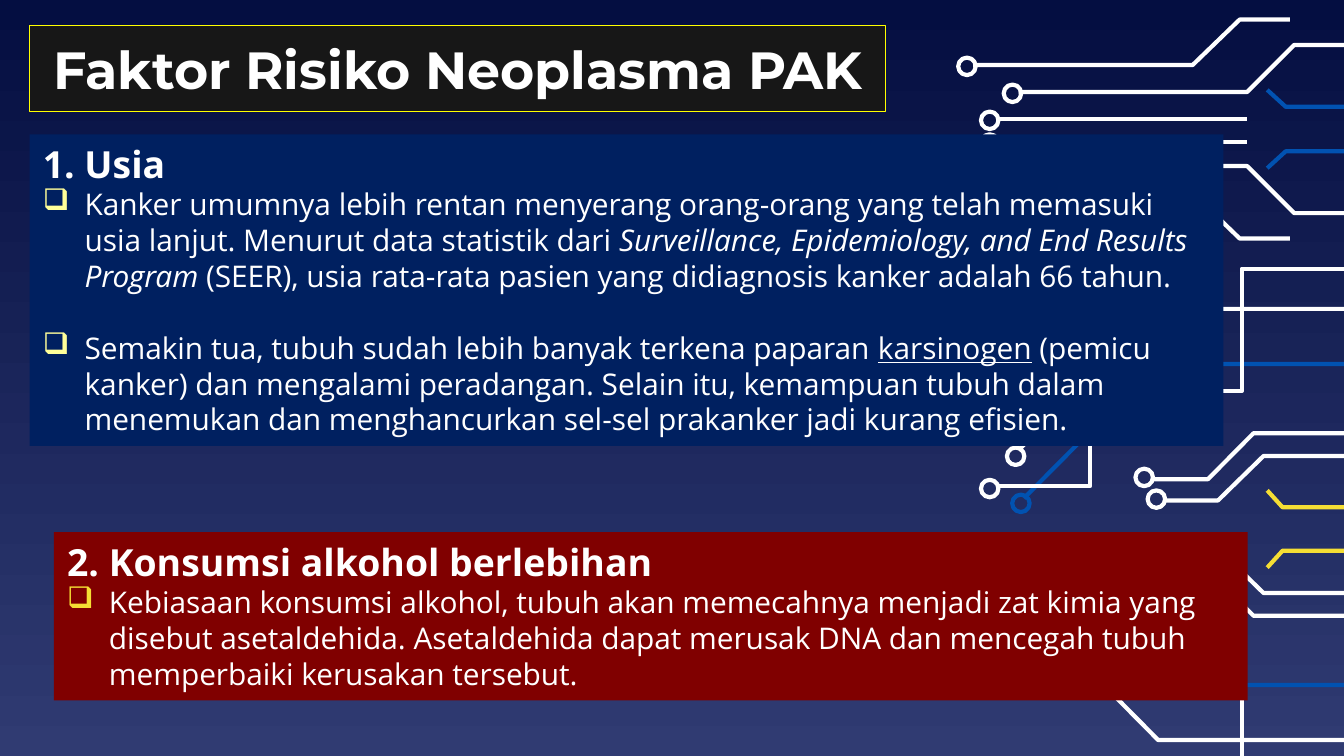
from dataclasses import dataclass
from typing import Optional

from lxml import etree
from pptx import Presentation
from pptx import util as u
from pptx.dml.color import RGBColor
from pptx.enum import shapes, text
from pptx.oxml import ns

WHITE = RGBColor(0xFF, 0xFF, 0xFF)
BLUE = RGBColor(0x01, 0x52, 0xB1)
GOLD = RGBColor(0xF5, 0xDE, 0x34)
CREAM = RGBColor(0xFF, 0xFF, 0x99)
YELLOW = RGBColor(0xFF, 0xFF, 0x00)
CHARCOAL = RGBColor(0x17, 0x17, 0x17)
NAVY = RGBColor(0x00, 0x20, 0x60)
MAROON = RGBColor(0x80, 0x00, 0x00)
SKY_TOP = RGBColor(0x04, 0x0E, 0x41)
SKY_BOTTOM = RGBColor(0x30, 0x3B, 0x72)

TRACE_WEIGHT = u.Pt(2.25)
NODE_SIZE = 0.33
LOWER_SUM = 19.83
TICK_SUM = 20
UPPER_SUM = 4.88


@dataclass
class Trace:
    points: list[tuple[float, float]]
    mirror_sum: float
    color: RGBColor = WHITE


@dataclass
class Node:
    left: float
    top: float
    color: RGBColor = WHITE


@dataclass
class Phrase:
    words: str
    italic: bool = False
    underline: bool = False


@dataclass
class Factor:
    left: float
    top: float
    height: float
    fill: RGBColor
    bullet: RGBColor
    heading: str
    points: list[list[Phrase]]


TRACES = [
    Trace([(21.79, 9.06), (22.83, 9.06), (23.69, 8.19), (25.91, 8.19)], LOWER_SUM),
    Trace([(22, 9.46), (23.02, 9.46), (23.88, 8.62), (25.91, 8.62)], LOWER_SUM),
    Trace([(23.95, 9.27), (24.24, 9.59), (25.68, 9.59)], TICK_SUM, GOLD),
    Trace([(23.95, 1.7), (24.3, 2.02), (25.73, 2.02)], UPPER_SUM, BLUE),
    Trace([(19.35, 9.42), (21.87, 6.88), (25.88, 6.88)], LOWER_SUM, BLUE),
    Trace([(18.82, 9.19), (20.6, 9.19), (20.6, 7.39), (23.47, 7.39),
           (23.47, 5.08), (25.91, 5.08)], LOWER_SUM),
    Trace([(19.25, 8.51), (21.89, 5.84), (25.91, 5.84)], LOWER_SUM),
    Trace([(18.39, 1.23), (22.54, 1.23), (23.43, 0.37), (24.38, 0.37)], UPPER_SUM),
    Trace([(19.25, 1.74), (23.57, 1.74), (24.46, 0.85), (26.04, 0.85)], UPPER_SUM),
]
STRAIGHT_TRACES = [2.25, 2.69]
NODES = [
    Node(21.69, 9.27), Node(21.46, 8.86), Node(19.13, 9.35, BLUE),
    Node(18.54, 9.07), Node(19.03, 8.46), Node(18.11, 1.09),
    Node(18.97, 1.6), Node(18.54, 2.11), Node(18.54, 2.54),
]
FACTORS = [
    Factor(0.56, 2.54, 5.89, NAVY, CREAM, "1. Usia", [
        [Phrase("Kanker umumnya lebih rentan menyerang orang-orang yang telah "
                "memasuki usia lanjut. Menurut data statistik dari "),
         Phrase("Surveillance, Epidemiology, and End Results Program ", italic=True),
         Phrase("(SEER), usia rata-rata pasien yang didiagnosis kanker adalah 66 tahun.")],
        [Phrase("Semakin tua, tubuh sudah lebih banyak terkena paparan "),
         Phrase("karsinogen", underline=True),
         Phrase(" (pemicu kanker) dan mengalami peradangan. Selain itu, kemampuan "
                "tubuh dalam menemukan dan menghancurkan sel-sel prakanker jadi "
                "kurang efisien.")],
    ]),
    Factor(1.02, 10.06, 3.18, MAROON, GOLD, "2. Konsumsi alkohol berlebihan", [
        [Phrase("Kebiasaan konsumsi alkohol, tubuh akan memecahnya menjadi zat kimia "
                "yang disebut asetaldehida. Asetaldehida dapat merusak DNA dan "
                "mencegah tubuh memperbaiki kerusakan tersebut.")],
    ]),
]


def add_text(paragraph, words: str, *, size: float = 16, font: str = "Open Sans",
             bold: bool = False, italic: bool = False, underline: bool = False) -> None:
    run = paragraph.add_run()
    run.text = words
    run.font.size = u.Pt(size)
    run.font.name = font
    run.font.color.rgb = WHITE
    run.font.bold = bold
    run.font.italic = italic
    run.font.underline = underline


def outline(shape, color: RGBColor) -> None:
    shape.shadow.inherit = False
    shape.fill.background()
    shape.line.color.rgb = color
    shape.line.width = TRACE_WEIGHT


def draw_trace(slide, trace: Trace) -> None:
    mirrored = [(x, trace.mirror_sum - y) for x, y in trace.points]
    for route in (trace.points, mirrored):
        start, *rest = [(u.Cm(x), u.Cm(y)) for x, y in route]
        builder = slide.shapes.build_freeform(*start)
        builder.add_line_segments(rest, close=False)
        outline(builder.convert_to_shape(), trace.color)


def draw_straight_trace(slide, y: float) -> None:
    wire = slide.shapes.add_connector(shapes.MSO_CONNECTOR.STRAIGHT,
                                      u.Cm(18.82), u.Cm(y), u.Cm(23.57), u.Cm(y))
    wire.line.color.rgb = WHITE
    wire.line.width = TRACE_WEIGHT
    etree.SubElement(wire._element.spPr, ns.qn("a:effectLst"))


def draw_node(slide, node: Node) -> None:
    ring = slide.shapes.add_shape(shapes.MSO_SHAPE.OVAL, u.Cm(node.left), u.Cm(node.top),
                                  u.Cm(NODE_SIZE), u.Cm(NODE_SIZE))
    outline(ring, node.color)


def add_bullet(paragraph, color: RGBColor) -> None:
    props = paragraph._p.get_or_add_pPr()
    props.set("marL", str(u.Cm(0.79)))
    props.set("indent", str(-u.Cm(0.79)))
    tint = etree.SubElement(props, ns.qn("a:buClr"))
    etree.SubElement(tint, ns.qn("a:srgbClr"), val=str(color))
    etree.SubElement(props, ns.qn("a:buChar"), char="❑")


def set_frame(frame, vertical_inset: float, anchor: text.MSO_ANCHOR,
              fit: Optional[text.MSO_AUTO_SIZE]) -> None:
    frame.word_wrap = True
    frame.auto_size = fit
    frame.vertical_anchor = anchor
    frame.margin_left = frame.margin_right = u.Cm(0.25)
    frame.margin_top = frame.margin_bottom = u.Cm(vertical_inset)


def draw_factor(slide, factor: Factor) -> None:
    panel = slide.shapes.add_shape(shapes.MSO_SHAPE.RECTANGLE, u.Cm(factor.left),
                                   u.Cm(factor.top), u.Cm(22.56), u.Cm(factor.height))
    panel.shadow.inherit = False
    panel.fill.solid()
    panel.fill.fore_color.rgb = factor.fill
    panel.line.fill.background()
    frame = panel.text_frame
    set_frame(frame, 0.13, text.MSO_ANCHOR.TOP, text.MSO_AUTO_SIZE.SHAPE_TO_FIT_TEXT)
    heading = frame.paragraphs[0]
    heading.alignment = text.PP_ALIGN.LEFT
    add_text(heading, factor.heading, size=20, bold=True)
    for index, phrases in enumerate(factor.points):
        point = frame.add_paragraph()
        point.alignment = text.PP_ALIGN.LEFT
        if index:
            point.space_before = u.Pt(19.3)
        add_bullet(point, factor.bullet)
        for phrase in phrases:
            add_text(point, phrase.words, italic=phrase.italic, underline=phrase.underline)


def format_title(title) -> None:
    title.left, title.top = u.Cm(0.56), u.Cm(0.48)
    title.width, title.height = u.Cm(16.18), u.Cm(1.63)
    title.fill.solid()
    title.fill.fore_color.rgb = CHARCOAL
    title.line.color.rgb = YELLOW
    title.line.width = u.Pt(0.75)
    set_frame(title.text_frame, 0.25, text.MSO_ANCHOR.MIDDLE, text.MSO_AUTO_SIZE.NONE)
    heading = title.text_frame.paragraphs[0]
    heading.alignment = text.PP_ALIGN.CENTER
    add_text(heading, "Faktor Risiko Neoplasma PAK", size=28, font="Montserrat", bold=True)


def main() -> None:
    deck = Presentation()
    deck.slide_width, deck.slide_height = u.Cm(25.4), u.Cm(14.29)
    slide = deck.slides.add_slide(deck.slide_layouts[5])
    sky = slide.background.fill
    sky.gradient()
    sky.gradient_angle = 270
    for stop, color in zip(sky.gradient_stops, (SKY_TOP, SKY_BOTTOM)):
        stop.color.rgb = color
    format_title(slide.shapes.title)
    for trace in TRACES:
        draw_trace(slide, trace)
    for y in STRAIGHT_TRACES:
        draw_straight_trace(slide, y)
    for node in NODES:
        draw_node(slide, node)
    for factor in FACTORS:
        draw_factor(slide, factor)
    deck.save("out.pptx")


if __name__ == "__main__":
    main()
